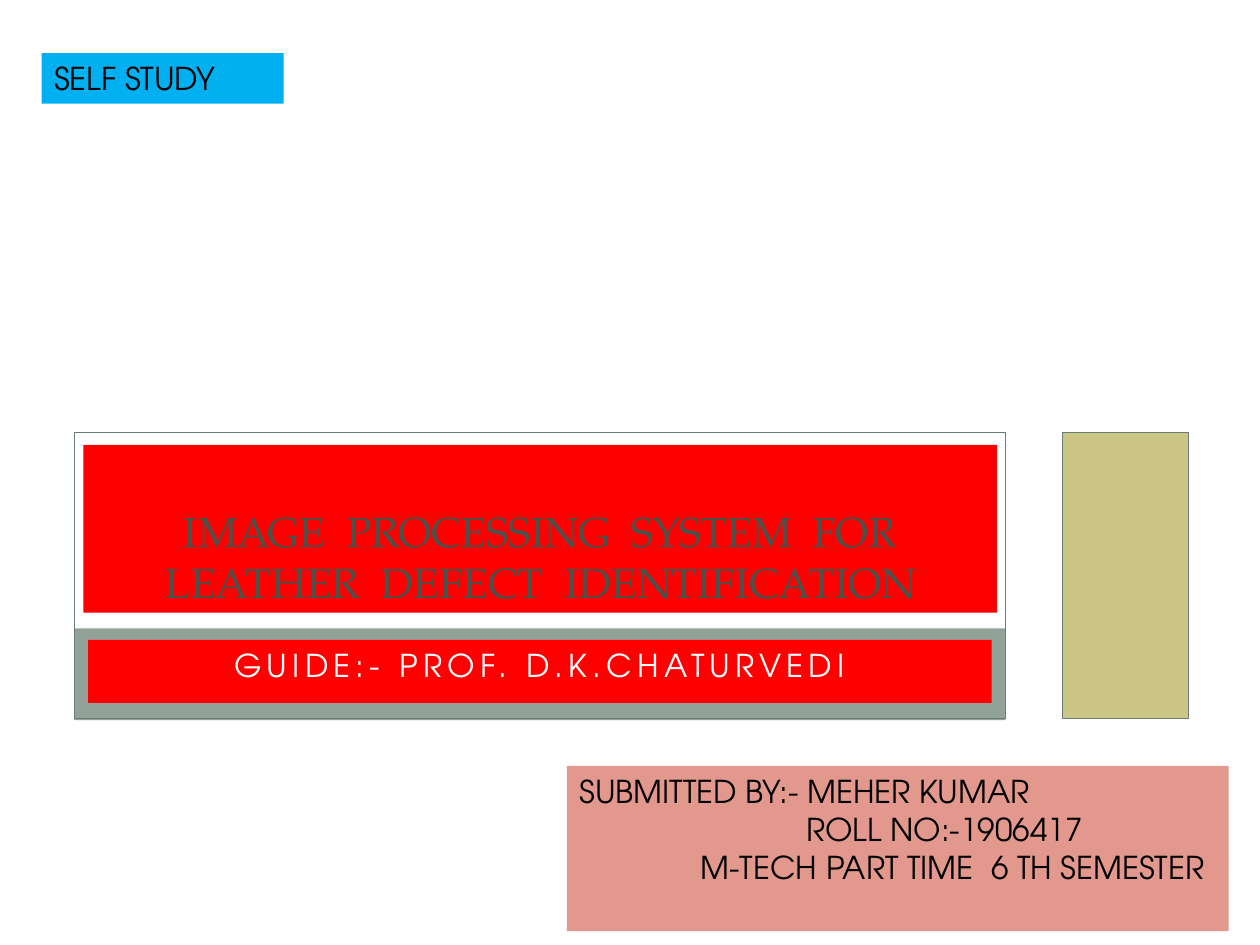
"""Build the title slide of a self-study talk on leather defect identification."""
from dataclasses import dataclass
from typing import NamedTuple, Optional

from lxml import etree
from pptx import Presentation
from pptx.dml.color import RGBColor
from pptx.enum import shapes, text
from pptx.oxml.ns import qn
from pptx.util import Cm, Pt

COLORS = {
    "white": "FFFFFF", "black": "000000", "red": "FF0000", "sky": "00B0F0",
    "salmon": "E2988C", "olive": "B5AE53", "sage": "93A299",
    "edge": "6B7D72", "slate": "47534C",
}
SANS, SERIF = "TeX Gyre Adventor", "TeX Gyre Pagella"


class Box(NamedTuple):
    left: float
    top: float
    width: float
    height: float


@dataclass
class Panel:
    box: Box
    fill: Optional[str] = None
    opacity: int = 100
    outlined: bool = False
    corner: Optional[float] = None


class Line(NamedTuple):
    words: str
    indent: float = 0


@dataclass
class Label:
    box: Box
    fill: str
    lines: list[Line]
    font: str = SANS
    size: int = 18
    color: str = "black"
    align: text.PP_ALIGN = text.PP_ALIGN.LEFT
    anchor: text.MSO_ANCHOR = text.MSO_ANCHOR.TOP
    tracking: int = 0


PANELS = [
    Panel(Box(0.25, 0.28, 24.89, 18.52), "white", corner=0.017),
    Panel(Box(0.97, 8.18, 19.86, 6.83), "white", 83),
    Panel(Box(21.03, 8.18, 3.3, 6.83), "white", 83),
    Panel(Box(21.41, 8.71, 2.54, 5.77), "olive", 70, outlined=True),
    Panel(Box(1.24, 8.48, 19.3, 6.25), "white"),
    Panel(Box(1.5, 12.67, 18.77, 1.85), "sage"),
    Panel(Box(1.5, 8.71, 18.77, 5.77), outlined=True),
]
LABELS = [
    Label(Box(1.78, 12.9, 18.21, 1.27), "red",
          [Line("GUIDE:- PROF. D.K.CHATURVEDI")], color="white",
          align=text.PP_ALIGN.CENTER, tracking=3),
    Label(Box(1.68, 8.97, 18.42, 3.38), "red",
          [Line("IMAGE  PROCESSING  SYSTEM  FOR LEATHER  DEFECT  IDENTIFICATION")],
          SERIF, 24, "slate", text.PP_ALIGN.CENTER, text.MSO_ANCHOR.BOTTOM),
    Label(Box(0.84, 1.07, 4.88, 1.02), "sky", [Line("SELF STUDY")]),
    Label(Box(11.43, 15.44, 13.34, 3.33), "salmon",
          [Line("SUBMITTED BY:- MEHER KUMAR"),
           Line("ROLL NO:-1906417", 4.57),
           Line("M-TECH PART TIME  6 TH SEMESTER", 2.45)]),
]


def rgb(name: str) -> RGBColor:
    """Return the named colour."""
    return RGBColor.from_string(COLORS[name])


def draw_panel(slide, panel: Panel) -> None:
    """Draw one background panel."""
    kind = shapes.MSO_SHAPE.RECTANGLE
    if panel.corner is not None:
        kind = shapes.MSO_SHAPE.ROUNDED_RECTANGLE
    block = slide.shapes.add_shape(kind, *map(Cm, panel.box))
    block.shadow.inherit = False
    if panel.corner is not None:
        block.adjustments[0] = panel.corner
    if panel.fill:
        block.fill.solid()
        block.fill.fore_color.rgb = rgb(panel.fill)
    else:
        block.fill.background()
    if panel.opacity < 100:
        tint = block.element.spPr.find(f"{qn('a:solidFill')}/{qn('a:srgbClr')}")
        etree.SubElement(tint, qn("a:alpha"), val=str(panel.opacity * 1000))
    if panel.outlined:
        block.line.color.rgb = rgb("edge")
        block.line.width = Pt(0.5)
    else:
        block.line.fill.background()


def draw_label(slide, label: Label) -> None:
    """Draw one filled text box."""
    box = slide.shapes.add_textbox(*map(Cm, label.box))
    box.fill.solid()
    box.fill.fore_color.rgb = rgb(label.fill)
    frame = box.text_frame
    frame.word_wrap = True
    frame.vertical_anchor = label.anchor
    for index, line in enumerate(label.lines):
        paragraph = frame.add_paragraph() if index else frame.paragraphs[0]
        run = paragraph.add_run()
        run.text = line.words
        paragraph.alignment = label.align
        paragraph.font.name = label.font
        paragraph.font.size = Pt(label.size)
        paragraph.font.color.rgb = rgb(label.color)
        if line.indent:
            paragraph._p.get_or_add_pPr().set("marL", str(Cm(line.indent)))
        if label.tracking:
            run._r.get_or_add_rPr().set("spc", str(label.tracking * 100))


def main() -> None:
    """Assemble and save the slide."""
    deck = Presentation()
    deck.slide_width, deck.slide_height = Cm(25.4), Cm(19.05)
    slide = deck.slides.add_slide(deck.slide_layouts[6])
    for panel in PANELS:
        draw_panel(slide, panel)
    for label in LABELS:
        draw_label(slide, label)
    deck.save("out.pptx")


if __name__ == "__main__":
    main()
